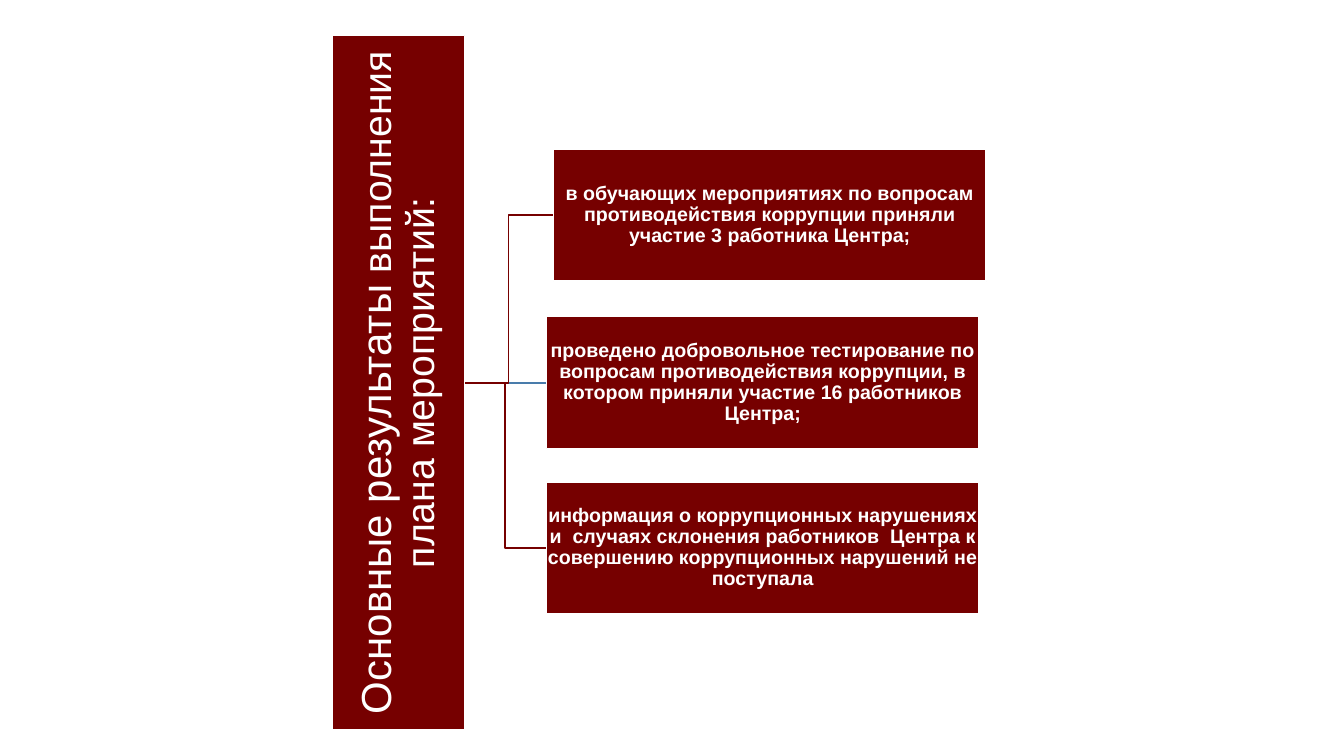
from pptx import Presentation
from pptx import util as u
from pptx.dml.color import RGBColor
from pptx.enum import shapes, text
from pptx.oxml import parse_xml
from pptx.oxml.ns import nsdecls

HUES = {"red": "760000", "blue": "497CAB", "white": "FFFFFF"}
WIDE, HIGH = 4.29, 1.31
STEM, MID = 4.6, 3.8

deck = Presentation()
deck.slide_width = u.Inches(13.33)
deck.slide_height = u.Inches(7.5)
slide = deck.slides.add_slide(deck.slide_layouts[6])


def hue(name):
    return RGBColor.from_string(HUES[name])


def add_box(runs, left, top, width=WIDE, turn=0, inset=0.01, bold=True):
    box = slide.shapes.add_shape(
        shapes.MSO_SHAPE.RECTANGLE,
        u.Inches(left), u.Inches(top), u.Inches(width), u.Inches(HIGH))
    box.rotation = turn
    box.shadow.inherit = False
    box.fill.solid()
    box.fill.fore_color.rgb = hue("red")
    box.line.color.rgb = hue("white")
    box.line.width = u.Pt(1)
    frame = box.text_frame
    frame.word_wrap = True
    frame.vertical_anchor = text.MSO_ANCHOR.MIDDLE
    frame.margin_left = frame.margin_right = u.Inches(inset)
    frame.margin_top = frame.margin_bottom = u.Inches(inset)
    para = frame.paragraphs[0]
    para.alignment = text.PP_ALIGN.CENTER
    para.line_spacing = 0.9
    for words, size in runs:
        run = para.add_run()
        run.text = words
        run.font.name = "Arial"
        run.font.size = u.Pt(size)
        run.font.bold = bold
        run.font.color.rgb = hue("white")


results = [
    (5.49, 1.48, "red", "в обучающих мероприятиях по вопросам противодействия "
     "коррупции приняли участие 3 работника Центра;"),
    (5.42, 3.14, "blue", "проведено добровольное тестирование по вопросам "
     "противодействия коррупции, в котором приняли участие 16 работников Центра;"),
    (5.42, 4.78, "red", "информация о коррупционных нарушениях и  случаях "
     "склонения работников  Центра к совершению коррупционных нарушений не поступала"),
]

for left, top, tint, words in reversed(results):
    end = round(top + HIGH / 2, 1) if tint == "blue" else top + HIGH / 2
    kind = shapes.MSO_CONNECTOR.STRAIGHT if end == MID else shapes.MSO_CONNECTOR.ELBOW
    link = slide.shapes.add_connector(
        kind, u.Inches(STEM), u.Inches(MID), u.Inches(left), u.Inches(end))
    link.line.color.rgb = hue(tint)
    link.line.width = u.Pt(1)
    link._element.spPr.append(parse_xml(f"<a:effectLst {nsdecls('a')}/>"))

add_box([("Основные результаты ", 30), ("выполнения плана мероприятий:", 28)],
        0.51, 3.14, width=6.89, turn=270, inset=0.02, bold=False)

for left, top, tint, words in results:
    add_box([(words, 14)], left, top)

deck.save("out.pptx")
